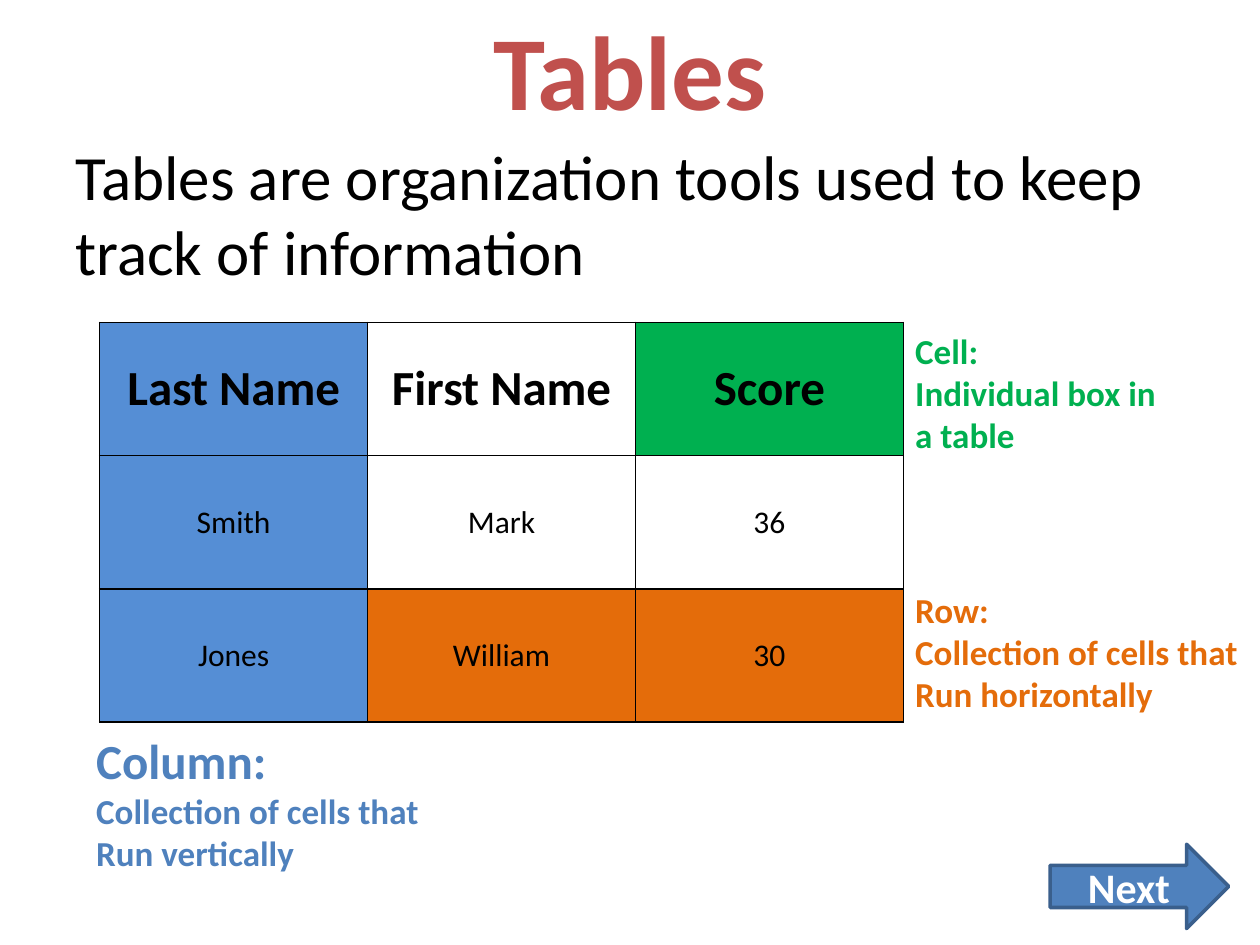
from lxml.etree import SubElement
from pptx import Presentation
from pptx.dml.color import RGBColor
from pptx.enum.shapes import MSO_SHAPE as Preset
from pptx.enum.text import MSO_ANCHOR as Anchor, PP_ALIGN as Align
from pptx.oxml.ns import qn
from pptx.util import Cm, Pt

BLACK = RGBColor(0x00, 0x00, 0x00)
WHITE = RGBColor(0xFF, 0xFF, 0xFF)
RED = RGBColor(0xC0, 0x50, 0x4D)
BLUE = RGBColor(0x4F, 0x81, 0xBD)
DARK_BLUE = RGBColor(0x3A, 0x5F, 0x8C)
COLUMN_BLUE = RGBColor(0x55, 0x8E, 0xD5)
CELL_GREEN = RGBColor(0x00, 0xB0, 0x50)
ROW_ORANGE = RGBColor(0xE4, 0x6C, 0x0A)


class SlideBuilder:
    def __init__(self, slide, font="Calibri"):
        self.slide = slide
        self.font = font

    def fill_text(self, frame, paragraphs, color, bold=True, align=Align.LEFT):
        """Fill a frame; each paragraph is a list of (line, size) pairs."""
        for index, lines in enumerate(paragraphs):
            paragraph = frame.add_paragraph() if index else frame.paragraphs[0]
            paragraph.alignment = align
            for number, (line, size) in enumerate(lines):
                if number:
                    paragraph.add_line_break()
                run = paragraph.add_run()
                run.text = line
                look = {"name": self.font, "size": Pt(size), "bold": bold}
                for key, value in look.items():
                    setattr(run.font, key, value)
                run.font.color.rgb = color

    def text(self, box, paragraphs, color, anchor=Anchor.TOP, **style):
        frame = self.slide.shapes.add_textbox(*map(Cm, box)).text_frame
        for key, value in {"word_wrap": True, "vertical_anchor": anchor}.items():
            setattr(frame, key, value)
        self.fill_text(frame, paragraphs, color, **style)

    def arrow(self, box, label, size):
        arrow = self.slide.shapes.add_shape(Preset.RIGHT_ARROW, *map(Cm, box))
        arrow.shadow.inherit = False
        arrow.fill.solid()
        arrow.fill.fore_color.rgb = BLUE
        arrow.line.color.rgb = DARK_BLUE
        arrow.line.width = Pt(2)
        arrow.text_frame.vertical_anchor = Anchor.MIDDLE
        self.fill_text(arrow.text_frame, [[(label, size)]], WHITE, align=Align.CENTER)

    def table(self, box, rows, fills):
        """Add a bordered table; fills maps (row, column) to a colour."""
        grid = self.slide.shapes.add_table(len(rows), len(rows[0]), *map(Cm, box)).table
        for r, row in enumerate(rows):
            for c, value in enumerate(row):
                cell = grid.cell(r, c)
                cell.vertical_anchor = Anchor.MIDDLE
                self.border(cell)
                if (r, c) in fills:
                    cell.fill.solid()
                    cell.fill.fore_color.rgb = fills[r, c]
                else:
                    cell.fill.background()
                header = r == 0
                self.fill_text(cell.text_frame, [[(value, 28 if header else 18)]],
                               BLACK, bold=header, align=Align.CENTER)

    def border(self, cell):
        properties = cell._tc.get_or_add_tcPr()
        for side in ("a:lnL", "a:lnR", "a:lnT", "a:lnB"):
            edge = SubElement(properties, qn(side), w=str(Pt(1)))
            fill = SubElement(edge, qn("a:solidFill"))
            SubElement(fill, qn("a:srgbClr"), val=str(BLACK))


def main():
    deck = Presentation()
    deck.slide_width, deck.slide_height = Cm(25.4), Cm(19.05)
    page = SlideBuilder(deck.slides.add_slide(deck.slide_layouts[6]))

    page.text((1.27, -0.2, 22.86, 3.18), [[("Tables", 60)]], RED,
              anchor=Anchor.MIDDLE, align=Align.CENTER)

    scores = [
        ["Last Name", "First Name", "Score"],
        ["Smith", "Mark", "36"],
        ["Jones", "William", "30"],
    ]
    highlights = {(row, 0): COLUMN_BLUE for row in range(3)}
    highlights[0, 2] = CELL_GREEN
    highlights[2, 1] = highlights[2, 2] = ROW_ORANGE
    page.table((2.01, 6.5, 16.2, 8.06), scores, highlights)

    page.text((1.69, 14.6, 7.2, 3.18),
              [[("Column:", 28), ("Collection of cells that", 20)],
               [("Run vertically", 20)]], BLUE)
    page.text((18.2, 11.74, 8.04, 2.82),
              [[("Row:", 20), ("Collection of cells that Run horizontally", 20)]],
              ROW_ORANGE)
    page.text((18.2, 6.52, 5.5, 2.82),
              [[("Cell:", 20), ("Individual box in a table", 20)]], CELL_GREEN)
    page.text((1.27, 2.64, 23.5, 3.33),
              [[("Tables are organization tools used to keep track of information", 36)]],
              BLACK, bold=False)
    page.arrow((21.17, 17.02, 3.6, 1.7), "Next", 24)

    deck.save("out.pptx")


if __name__ == "__main__":
    main()
